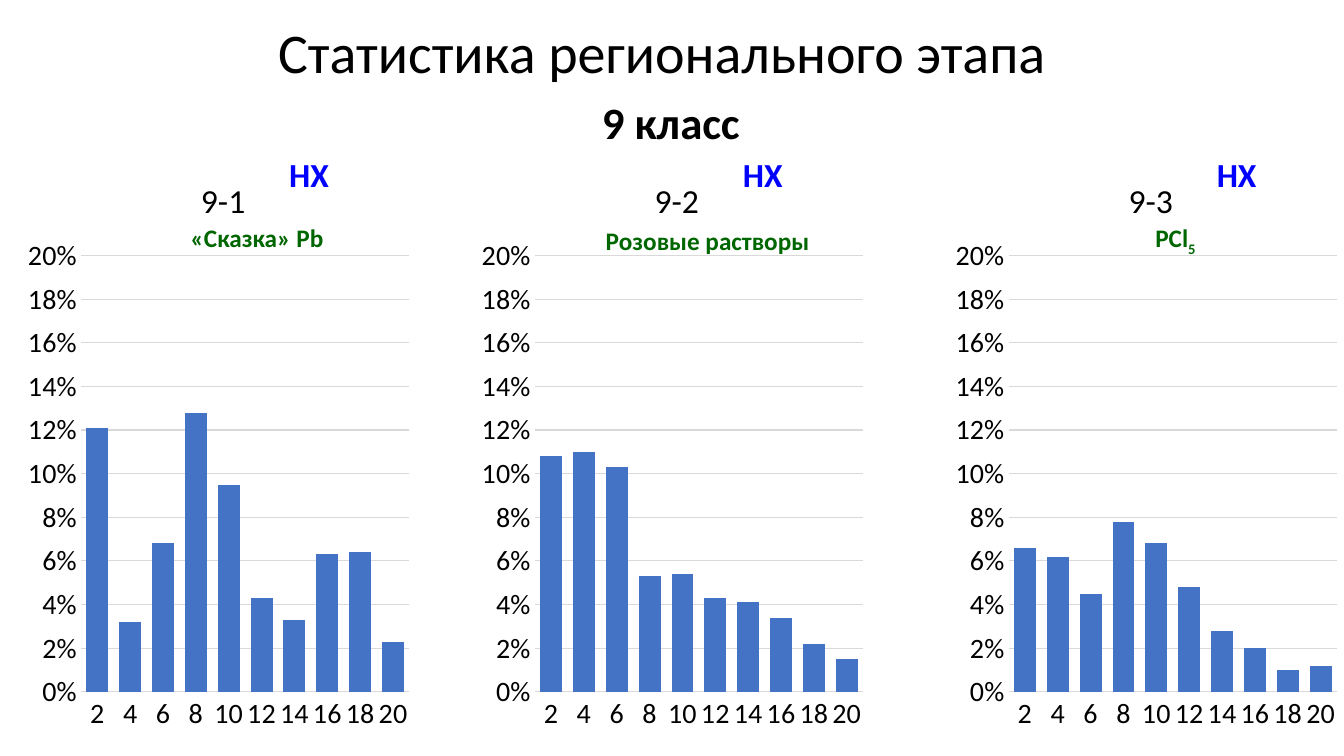
from lxml.etree import SubElement
from pptx import Presentation
from pptx.chart.data import CategoryChartData
from pptx.dml.color import RGBColor
from pptx.enum.chart import XL_CHART_TYPE, XL_TICK_MARK
from pptx.enum.text import MSO_AUTO_SIZE
from pptx.oxml.ns import qn
from pptx.util import Inches, Pt

FONT = "Calibri"
BLACK, BLUE, GREEN = "000000", "0000FF", "006600"
BAR, GRID = "4472C4", "D9D9D9"
SCORES = range(2, 21, 2)
CHART_TOP, CHART_WIDTH, CHART_HEIGHT = 1.47, 3.94, 5.91

# title, chart left, topic runs (text, subscript), topic offset (x, y), topic width, shares in percent
PROBLEMS = [
    ("9-1", 0.2, [("«Сказка» Pb", False)], (1.59, 0.69), 1.53,
     [12.1, 3.2, 6.8, 12.8, 9.5, 4.3, 3.3, 6.3, 6.4, 2.3]),
    ("9-2", 4.7, [("Розовые растворы", False)], (1.21, 0.72), 2.24,
     [10.8, 11, 10.3, 5.3, 5.4, 4.3, 4.1, 3.4, 2.2, 1.5]),
    ("9-3", 9.4, [("РСl", False), ("5", True)], (1.96, 0.69), 0.62,
     [6.6, 6.2, 4.5, 7.8, 6.8, 4.8, 2.8, 2, 1, 1.2]),
]


def color(value):
    return RGBColor.from_string(value)


def style_font(font, size, value=BLACK, bold=False):
    font.name, font.size, font.bold = FONT, Pt(size), bold
    font.color.rgb = color(value)


def style_line(line):
    line.color.rgb = color(GRID)
    line.width = Pt(0.75)


def add_label(slide, box, runs, size, value=BLACK, bold=False):
    shape = slide.shapes.add_textbox(*map(Inches, box))
    frame = shape.text_frame
    frame.word_wrap = False
    frame.auto_size = MSO_AUTO_SIZE.SHAPE_TO_FIT_TEXT
    for text, subscript in runs:
        run = frame.paragraphs[0].add_run()
        run.text = text
        style_font(run.font, size, value, bold)
        if subscript:
            run._r.get_or_add_rPr().set("baseline", "-25000")


def place(parent, inner=False, **shares):
    """Fix a chart part at shares of the chart's size."""
    layout = parent.find(qn("c:layout"))
    if layout is None:
        layout = SubElement(parent, qn("c:layout"))
        anchor = parent.find(qn("c:tx"))
        if anchor is None:
            parent.insert(0, layout)
        else:
            anchor.addnext(layout)
    manual = SubElement(layout, qn("c:manualLayout"))
    if inner:
        SubElement(manual, qn("c:layoutTarget")).set("val", "inner")
    for mode in ("xMode", "yMode"):
        SubElement(manual, qn(f"c:{mode}")).set("val", "edge")
    for name, share in shares.items():
        SubElement(manual, qn(f"c:{name}")).set("val", str(share))


def add_score_chart(slide, box, title, percents):
    data = CategoryChartData(number_format="0%")
    data.categories = [str(score) for score in SCORES]
    data.add_series("Series 1", [round(percent / 100, 3) for percent in percents])
    chart = slide.shapes.add_chart(
        XL_CHART_TYPE.COLUMN_CLUSTERED, *map(Inches, box), data).chart
    style_font(chart.font, 20)
    chart.has_legend = False

    run = chart.chart_title.text_frame.paragraphs[0].add_run()
    run.text = title
    style_font(run.font, 24)
    chart.chart_title.include_in_layout = False
    place(chart.chart_title._element, x=0.44, y=0.04)

    plot = chart.plots[0]
    plot.gap_width = 50
    plot.vary_by_categories = False
    fill = plot.series[0].format.fill
    fill.solid()
    fill.fore_color.rgb = color(BAR)
    place(chart._chartSpace.chart.plotArea, inner=True, x=0.153, y=0.18, w=0.827, h=0.733)

    for axis in (chart.category_axis, chart.value_axis):
        axis.major_tick_mark = axis.minor_tick_mark = XL_TICK_MARK.NONE
        style_font(axis.tick_labels.font, 20)
    style_line(chart.category_axis.format.line)
    values = chart.value_axis
    values.minimum_scale, values.maximum_scale, values.major_unit = 0, 0.2, 0.02
    values.tick_labels.number_format = "0%"
    values.tick_labels.number_format_is_linked = False
    values.format.line.fill.background()
    style_line(values.major_gridlines.format.line)


def add_headings(slide):
    add_label(slide, (2.66, 0.12, 8.02, 0.77), [("Статистика регионального этапа", False)], 40)
    add_label(slide, (5.87, 0.89, 1.58, 0.64), [("9 класс", False)], 32, bold=True)


def add_problem(slide, title, left, topic, offset, topic_width, percents):
    """Add one problem's chart with its section and topic labels."""
    add_score_chart(slide, (left, CHART_TOP, CHART_WIDTH, CHART_HEIGHT), title, percents)
    add_label(slide, (left + 2.57, CHART_TOP + 0.01, 0.6, 0.5), [("НХ", False)], 24, BLUE, True)
    add_label(slide, (left + offset[0], CHART_TOP + offset[1], topic_width, 0.4),
              topic, 18, GREEN, True)


def main():
    presentation = Presentation()
    presentation.slide_width, presentation.slide_height = Inches(13.33), Inches(7.5)
    slide = presentation.slides.add_slide(presentation.slide_layouts[6])
    add_headings(slide)
    for problem in PROBLEMS:
        add_problem(slide, *problem)
    presentation.save("out.pptx")


if __name__ == "__main__":
    main()
